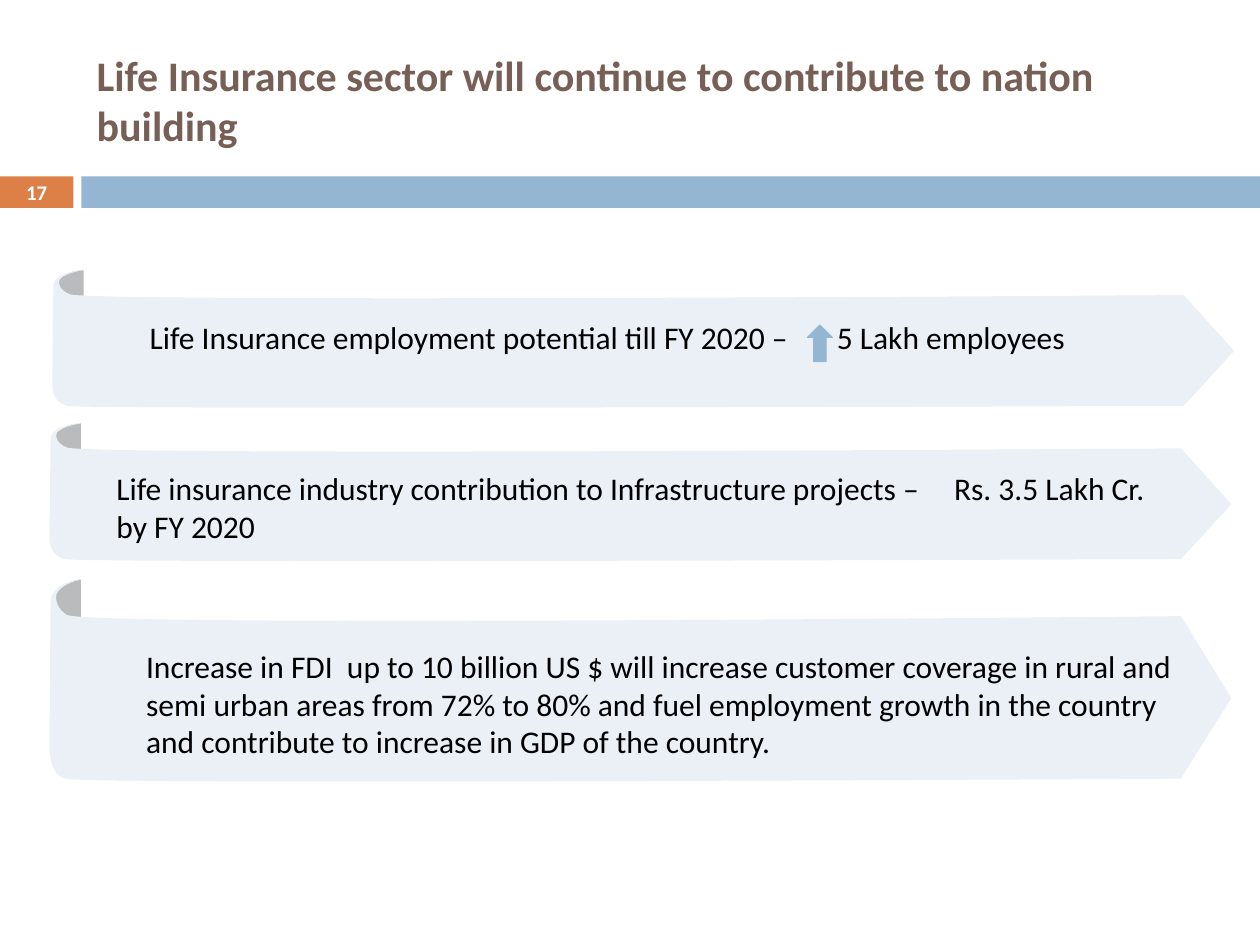
from dataclasses import dataclass
from itertools import chain

from lxml import etree
from pptx import Presentation
from pptx.dml.color import RGBColor
from pptx.enum.shapes import MSO_SHAPE
from pptx.enum.text import MSO_ANCHOR, PP_ALIGN
from pptx.oxml.ns import qn
from pptx.slide import Slide
from pptx.util import Pt

RECTANGLE = MSO_SHAPE.RECTANGLE
UP_ARROW = MSO_SHAPE.UP_ARROW
TOP, MIDDLE = MSO_ANCHOR.TOP, MSO_ANCHOR.MIDDLE
LEFT, CENTER = PP_ALIGN.LEFT, PP_ALIGN.CENTER

COLORS = {
    "orange": "DD8047",
    "blue": "94B6D2",
    "pale": "EAF0F6",
    "curl": "BABBBC",
    "brown": "775F55",
    "black": "000000",
    "white": "FFFFFF",
}

# Ribbon outlines at full height: a start point, then cubic curves
# (two control points and an end point).
RIBBON_HEIGHT = 117.4
CURL_OUTLINE = [
    [(18, 0)],
    [(18, 0), (7.9, 0), (3.6, 8.6)],
    [(0, 16.6), (14.4, 24.5), (18, 21.6)],
]
RIBBON_OUTLINE = [
    [(675.4, 67.7)],
    [(646.6, 113.8), (646.6, 113.8), (646.6, 113.8)],
    [(646.6, 113.8), (15.8, 117.4), (8.9, 113.8)],
    [(2.9, 111.6), (0.7, 105.8), (0.2, 98.6)],
    [(0, 92.2), (0.7, 22.3), (0.7, 13)],
    [(0.7, 3.6), (13, 0), (18.7, 0)],
    [(13.7, 0.7), (6.5, 3.6), (4.3, 7.9)],
    [(2.9, 11.5), (5, 17.3), (10, 20.2)],
    [(23, 27.4), (646.6, 20.9), (646.6, 20.9)],
]


@dataclass
class SlideBuilder:
    slide: Slide
    font_name: str = "Calibri"

    def paint(self, shape, color):
        shape.shadow.inherit = False
        shape.fill.solid()
        shape.fill.fore_color.rgb = RGBColor.from_string(COLORS[color])
        shape.line.fill.background()

    def shape(self, kind, left, top, width, height, color):
        shape = self.slide.shapes.add_shape(
            kind, Pt(left), Pt(top), Pt(width), Pt(height))
        self.paint(shape, color)
        return shape

    def arrow(self, left, top, width, height, color):
        arrow = self.shape(UP_ARROW, left, top, width, height, color)
        arrow.line.color.rgb = RGBColor.from_string(COLORS[color])
        arrow.line.width = Pt(0.5)

    def outline(self, outline, left, top, stretch, color):
        """Draw a freeform, joining each three line points into a cubic curve."""
        points = [(Pt(left + x), Pt(top + y * stretch))
                  for x, y in chain.from_iterable(outline)]
        builder = self.slide.shapes.build_freeform(*points[0])
        builder.add_line_segments(points[1:], close=True)
        shape = builder.convert_to_shape()
        lines = list(shape._element.iter(qn("a:lnTo")))
        for first in range(0, len(lines), 3):
            curve = etree.Element(qn("a:cubicBezTo"))
            lines[first].addprevious(curve)
            for line in lines[first:first + 3]:
                curve.append(line[0])
                line.getparent().remove(line)
        self.paint(shape, color)

    def ribbon(self, left, top, height):
        stretch = height / RIBBON_HEIGHT
        self.outline(CURL_OUTLINE, left, top, stretch, "curl")
        self.outline(RIBBON_OUTLINE, left, top, stretch, "pale")

    def text(self, text, left, top, width, height, size=18, color="black",
             bold=False, anchor=TOP, align=LEFT, tab=None):
        box = self.slide.shapes.add_textbox(Pt(left), Pt(top), Pt(width), Pt(height))
        frame = box.text_frame
        frame.word_wrap = True
        frame.vertical_anchor = anchor
        frame.text = text
        paragraph = frame.paragraphs[0]
        paragraph.alignment = align
        if tab:
            properties = paragraph._p.get_or_add_pPr()
            stops = etree.SubElement(properties, qn("a:tabLst"))
            etree.SubElement(stops, qn("a:tab"), pos=str(Pt(tab)), algn="l")
        font = paragraph.font
        font.name = self.font_name
        font.size = Pt(size)
        font.bold = bold
        font.color.rgb = RGBColor.from_string(COLORS[color])


def main():
    presentation = Presentation()
    presentation.slide_width, presentation.slide_height = Pt(720), Pt(540)
    builder = SlideBuilder(presentation.slides.add_slide(presentation.slide_layouts[6]))

    builder.shape(RECTANGLE, 0, 100.8, 42, 18, "orange")
    builder.shape(RECTANGLE, 46.5, 100.8, 673.5, 18, "blue")
    builder.text("17", 0, 100.1, 42, 19.4, size=11.9, color="white",
                 bold=True, anchor=MIDDLE, align=CENTER)
    builder.text("Life Insurance sector will continue to contribute to nation building",
                 48.2, 18, 642, 78, size=24, color="brown", bold=True, anchor=MIDDLE)

    for left, top, height in ((29.8, 154.4, 80), (28.2, 242, 80), (28.2, 331.2, 117.4)):
        builder.ribbon(left, top, height)

    builder.text("Life Insurance employment potential till FY 2020 –\t5 Lakh employees",
                 78.4, 178.1, 622, 29, tab=392.7)
    builder.arrow(461.3, 185.6, 14.4, 21, "blue")
    builder.text("Life insurance industry contribution to Infrastructure projects –"
                 "\tRs. 3.5 Lakh Cr. by FY 2020",
                 59.4, 264.4, 608, 51, tab=478.7)
    builder.text("Increase in FDI  up to 10 billion US $ will increase customer coverage "
                 "in rural and semi urban areas from 72% to 80% and fuel employment growth "
                 "in the country and contribute to increase in GDP of the country.",
                 76.4, 366, 616, 84)

    presentation.save("out.pptx")


if __name__ == "__main__":
    main()
